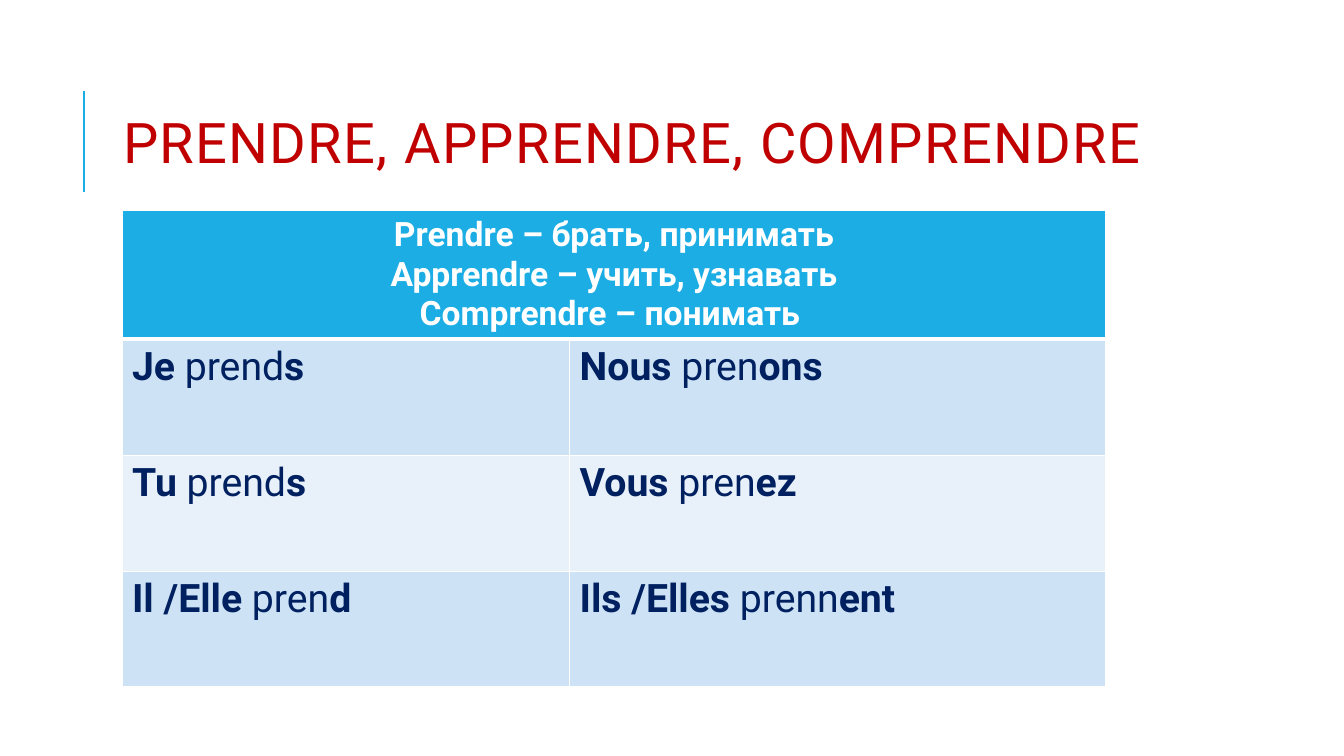
from dataclasses import dataclass

from lxml import etree
from pptx import Presentation
from pptx.dml.color import RGBColor
from pptx.enum.shapes import MSO_CONNECTOR
from pptx.enum.text import MSO_ANCHOR, MSO_AUTO_SIZE, PP_ALIGN
from pptx.oxml.ns import qn
from pptx.util import Inches, Pt

STRAIGHT = MSO_CONNECTOR.STRAIGHT
MIDDLE = MSO_ANCHOR.MIDDLE
NO_AUTOFIT = MSO_AUTO_SIZE.NONE
LEFT, CENTER = PP_ALIGN.LEFT, PP_ALIGN.CENTER

HEADING = "PRENDRE, APPRENDRE, COMPRENDRE"
MEANINGS = [
    "Prendre – брать, принимать",
    "Apprendre – учить, узнавать",
    "Comprendre – понимать ",
]
CONJUGATION = [
    [("Je ", "prend", "s"), ("Nous ", "pren", "ons")],
    [("Tu ", "prend", "s"), ("Vous ", "pren", "ez")],
    [("Il /Elle ", "pren", "d"), ("Ils /Elles ", "prenn", "ent")],
]

SLIDE_SIZE = (13.33, 7.5)
TITLE_BOX = (1.12, 0.64, 10.63, 1.64)
RULE_X, RULE_TOP, RULE_BOTTOM = 0.83, 0.9, 1.9
TABLE_LEFT, TABLE_TOP = 1.21, 2.09
COLUMNS = (4.44, 5.32)
HEADER_HEIGHT, ROW_HEIGHT = 1.26, 1.15


@dataclass(frozen=True)
class Theme:
    font: str = "Roboto"
    accent: str = "1CADE4"
    heading: str = "C00000"
    verb: str = "002060"
    white: str = "FFFFFF"
    bands: tuple = ("CDE3F5", "E8F1FA")
    heading_size: int = 40
    meaning_size: int = 24
    verb_size: int = 28


THEME = Theme()


def set_font(paragraph, size, color, bold=None):
    font = paragraph.font
    font.name, font.size, font.bold = THEME.font, Pt(size), bold
    font.color.rgb = RGBColor.from_string(color)


def style_cell(cell, fill, bottom_width=1):
    properties = cell._tc.get_or_add_tcPr()
    for side, width in zip("LRTB", (1, 1, 1, bottom_width)):
        border = etree.SubElement(properties, qn(f"a:ln{side}"), w=str(Pt(width)))
        solid = etree.SubElement(border, qn("a:solidFill"))
        etree.SubElement(solid, qn("a:srgbClr"), val=THEME.white)
    cell.fill.solid()
    cell.fill.fore_color.rgb = RGBColor.from_string(fill)


def add_heading(slide):
    title = slide.shapes.title
    title.left, title.top, title.width, title.height = map(Inches, TITLE_BOX)
    frame = title.text_frame
    frame.text = HEADING
    frame.vertical_anchor = MIDDLE
    frame.auto_size = NO_AUTOFIT
    paragraph = frame.paragraphs[0]
    paragraph.alignment = LEFT
    paragraph.line_spacing = 0.8
    set_font(paragraph, THEME.heading_size, THEME.heading)
    paragraph.runs[0].font._element.set("spc", "100")


def add_rule(slide):
    rule = slide.shapes.add_connector(
        STRAIGHT, *map(Inches, (RULE_X, RULE_BOTTOM, RULE_X, RULE_TOP)))
    rule.line.color.rgb = RGBColor.from_string(THEME.accent)
    rule.line.width = Pt(1.5)
    etree.SubElement(rule._element.spPr, qn("a:effectLst"))


def add_conjugation(slide):
    heights = [HEADER_HEIGHT] + [ROW_HEIGHT] * len(CONJUGATION)
    box = (TABLE_LEFT, TABLE_TOP, sum(COLUMNS), sum(heights))
    table = slide.shapes.add_table(
        len(heights), len(COLUMNS), *map(Inches, box)).table
    for column, width in zip(table.columns, COLUMNS):
        column.width = Inches(width)
    for row, height in zip(table.rows, heights):
        row.height = Inches(height)

    header = table.cell(0, 0)
    header.merge(table.cell(0, len(COLUMNS) - 1))
    header.text = "\n".join(MEANINGS)
    for paragraph in header.text_frame.paragraphs:
        paragraph.alignment = CENTER
        set_font(paragraph, THEME.meaning_size, THEME.white, True)
    for cell in table.rows[0].cells:
        style_cell(cell, THEME.accent, 3)

    for r, forms in enumerate(CONJUGATION):
        for c, parts in enumerate(forms):
            cell = table.cell(r + 1, c)
            style_cell(cell, THEME.bands[r % 2])
            paragraph = cell.text_frame.paragraphs[0]
            set_font(paragraph, THEME.verb_size, THEME.verb)
            for part, bold in zip(parts, (True, False, True)):
                run = paragraph.add_run()
                run.text = part
                run.font.bold = bold


def main():
    deck = Presentation()
    deck.slide_width, deck.slide_height = map(Inches, SLIDE_SIZE)
    slide = deck.slides.add_slide(deck.slide_layouts[5])
    add_rule(slide)
    add_heading(slide)
    add_conjugation(slide)
    deck.save("out.pptx")


if __name__ == "__main__":
    main()
